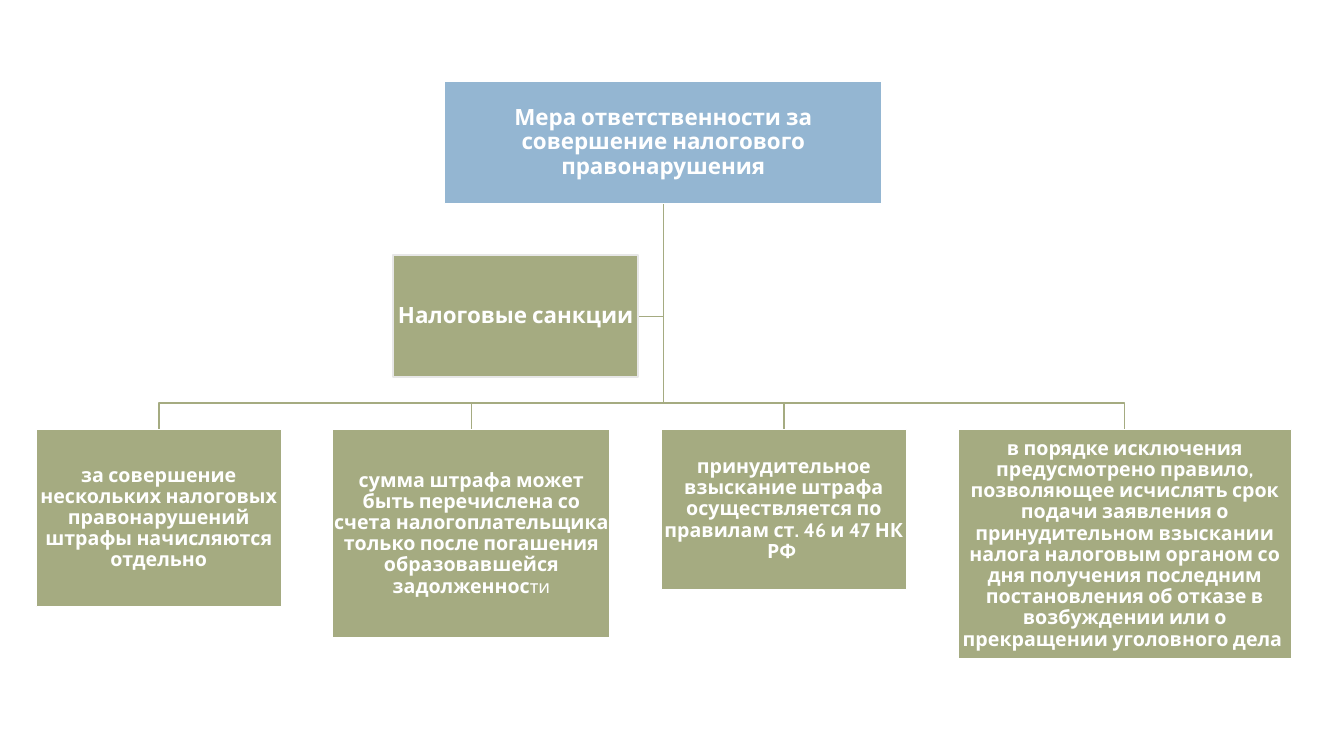
from pptx import Presentation
from pptx.dml.color import RGBColor
from pptx.enum.shapes import MSO_SHAPE
from pptx.enum.text import MSO_ANCHOR, PP_ALIGN
from pptx.util import Inches, Pt

HUES = {"blue": "94B6D2", "olive": "A5AB81", "white": "FFFFFF", "pale": "E7E7E7"}

TRUNK, TOP, BAR, ROW, GAP = 6.58, 2.02, 4, 4.26, 0.51

# Width, height and runs (text, size, bold) of each box in the bottom row
LEAVES = [
    (2.43, 1.76, [("за совершение нескольких налоговых правонарушений штрафы "
                   "начисляются отдельно", 14, True)]),
    (2.75, 2.07, [("сумма штрафа может быть перечислена со счета налогоплательщика "
                   "только после погашения образовавшейся задолженнос", 14, True),
                  ("ти", 13, False)]),
    (2.43, 1.59, [("принудительное взыскание штрафа осуществляется по правилам "
                   "ст. 46 и 47 НК РФ ", 14, True)]),
    (3.31, 2.28, [("в порядке исключения предусмотрено правило, позволяющее исчислять "
                   "срок подачи заявления о принудительном взыскании налога налоговым "
                   "органом со дня получения последним постановления об отказе в "
                   "возбуждении или о прекращении уголовного дела ", 14, True)]),
]


class Chart:
    """Draws the parts of an organisation chart on one slide."""

    def __init__(self, slide, font):
        self.slide = slide
        self.font = font

    def hue(self, name):
        return RGBColor.from_string(HUES[name])

    def edge(self, shape, name):
        shape.shadow.inherit = False
        shape.line.color.rgb = self.hue(name)
        shape.line.width = Pt(1)

    def link(self, *points):
        """Draw an open line through the points, given in inches."""
        spots = [(Inches(x), Inches(y)) for x, y in points]
        pen = self.slide.shapes.build_freeform(*spots[0])
        pen.add_line_segments(spots[1:], close=False)
        line = pen.convert_to_shape()
        line.fill.background()
        self.edge(line, "olive")

    def box(self, left, top, width, height, runs, fill="olive", rim="white"):
        shape = self.slide.shapes.add_shape(
            MSO_SHAPE.RECTANGLE, Inches(left), Inches(top), Inches(width), Inches(height))
        shape.fill.solid()
        shape.fill.fore_color.rgb = self.hue(fill)
        self.edge(shape, rim)
        frame = shape.text_frame
        frame.word_wrap = True
        frame.vertical_anchor = MSO_ANCHOR.MIDDLE
        frame.margin_left = frame.margin_right = Inches(0.01)
        frame.margin_top = frame.margin_bottom = Inches(0.01)
        para = frame.paragraphs[0]
        para.alignment = PP_ALIGN.CENTER
        para.line_spacing = 0.9
        for text, size, bold in runs:
            run = para.add_run()
            run.text = text
            run.font.name = self.font
            run.font.size = Pt(size)
            run.font.bold = bold
            run.font.color.rgb = self.hue("white")


def main():
    deck = Presentation()
    deck.slide_width, deck.slide_height = Inches(13.33), Inches(7.5)
    chart = Chart(deck.slides.add_slide(deck.slide_layouts[6]), "Cabin")

    chart.link((TRUNK, TOP), (TRUNK, 3.14), (6.33, 3.14))
    left = 0.36
    for width, height, runs in LEAVES:
        mid = left + width / 2
        chart.link((TRUNK, TOP), (TRUNK, BAR), (mid, BAR), (mid, ROW))
        chart.box(left, ROW, width, height, runs)
        left += width + GAP

    chart.box(4.41, 0.81, 4.34, 1.21,
              [("Мера ответственности за совершение налогового правонарушения", 16, True)],
              fill="blue")
    chart.box(3.9, 2.53, 2.43, 1.21, [("Налоговые санкции", 16, True)], rim="pale")

    deck.save("out.pptx")


if __name__ == "__main__":
    main()
